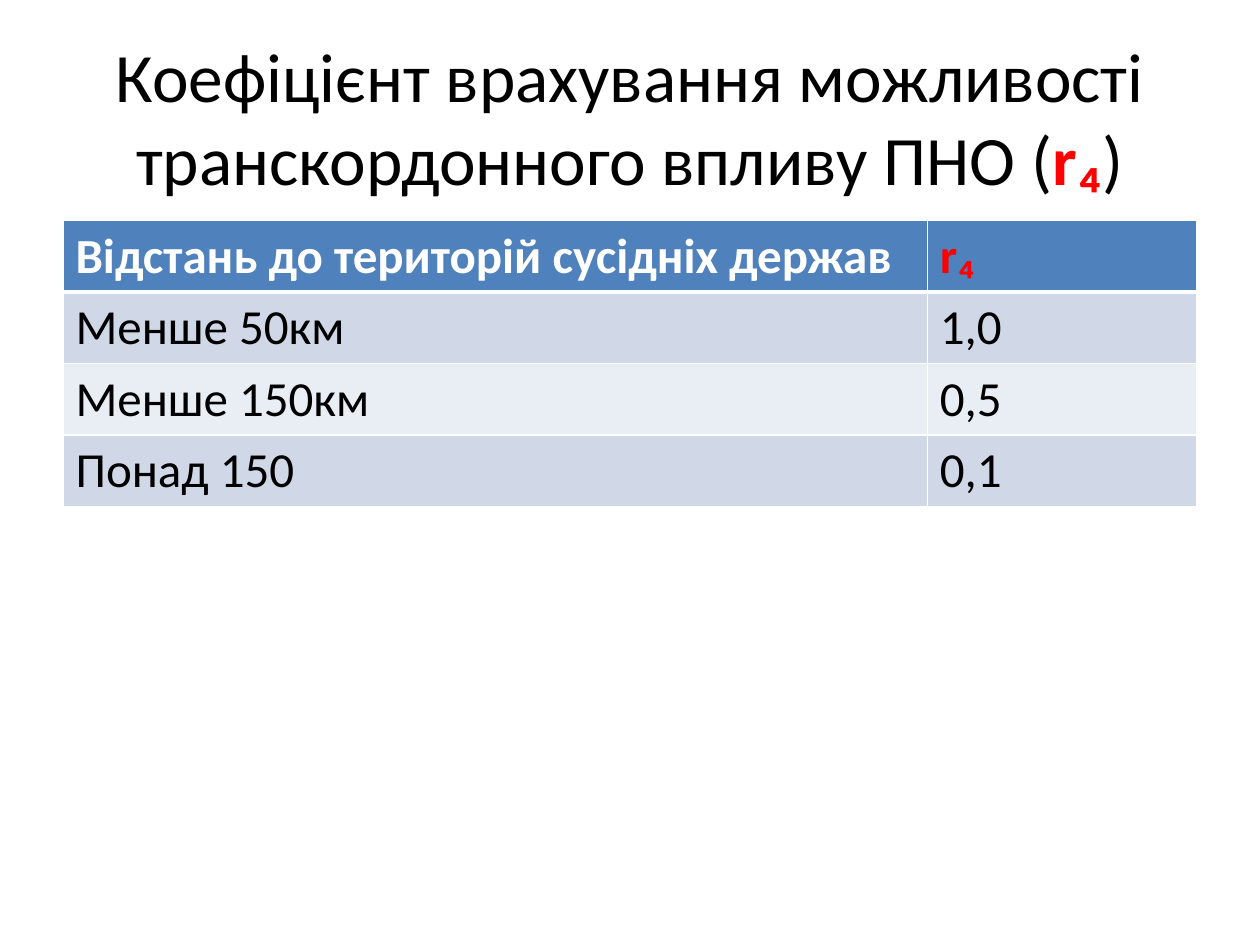
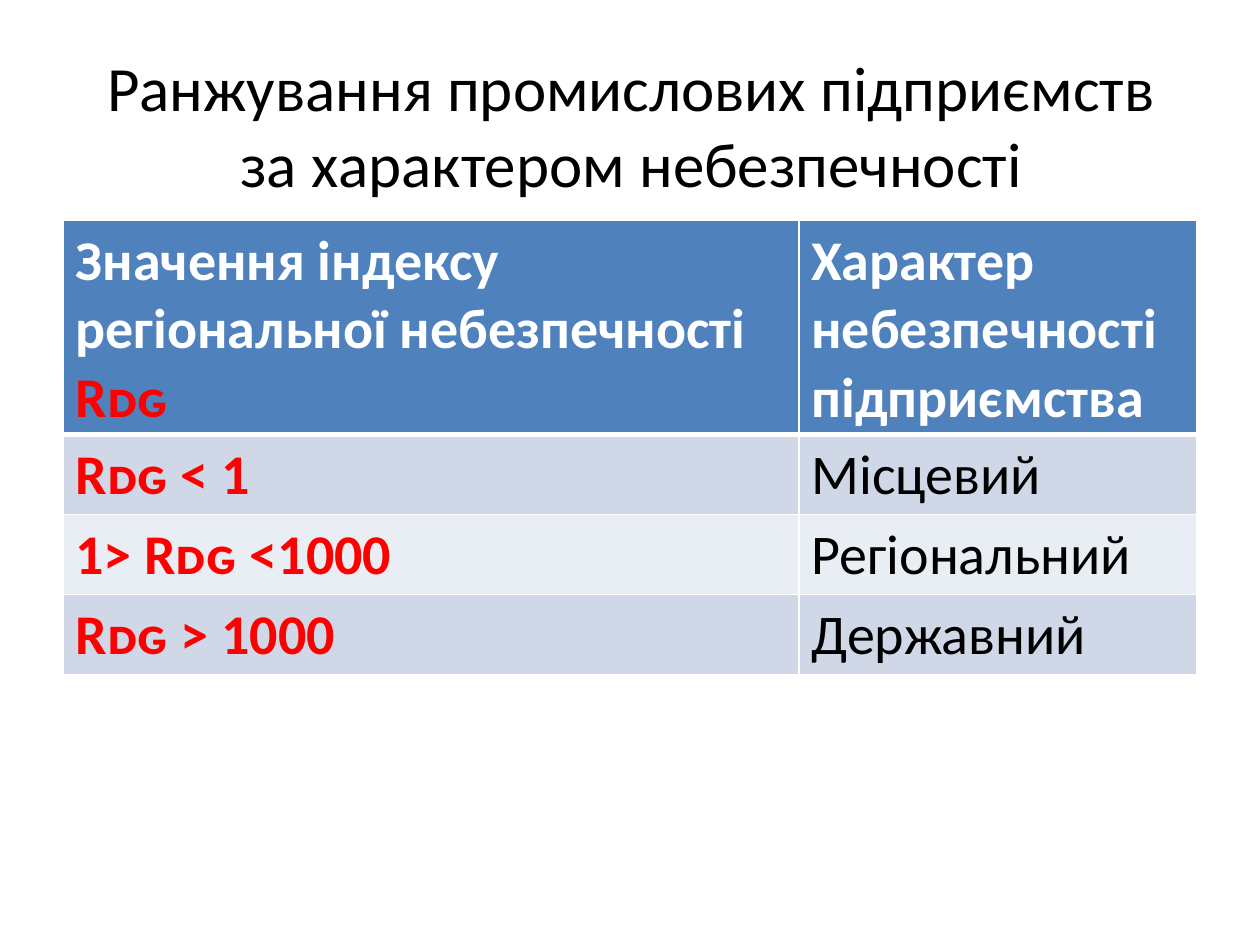
from pptx import Presentation
from pptx.dml.color import RGBColor
from pptx.enum.text import MSO_ANCHOR, PP_ALIGN
from pptx.oxml import parse_xml
from pptx.oxml.ns import nsdecls
from pptx.util import Inches, Pt

# Content: text between asterisks is a red, bold symbol
SLIDES = [
    {
        "title": "Коефіцієнт врахування можливості транскордонного впливу ПНО (*r₄*)",
        "title_at": (0.5, 0.3),
        "title_size": 39.6,
        "table_size": 28,
        "table_height": 2.27,
        "columns": (6.86, 2.14),
        "rows": [
            ("Відстань до територій сусідніх держав", "*r₄*"),
            ("Менше 50км", "1,0"),
            ("Менше 150км", "0,5"),
            ("Понад 150", "0,1"),
        ],
    },
    {
        "title": "Ранжування промислових підприємств за характером небезпечності",
        "title_at": (0.51, 0.36),
        "title_size": 36,
        "table_size": 32,
        "table_height": 3.6,
        "columns": (5.84, 3.16),
        "rows": [
            ("Значення індексу регіональної небезпечності *Rᴅԍ*",
             "Характер небезпечності підприємства"),
            ("*Rᴅԍ < 1*", "Місцевий"),
            ("*1> Rᴅԍ <1000*", "Регіональний"),
            ("*Rᴅԍ > 1000*", "Державний"),
        ],
    },
]

# Shared style
FONT = "Calibri"
BLACK = RGBColor(0x00, 0x00, 0x00)
WHITE = RGBColor(0xFF, 0xFF, 0xFF)
RED = RGBColor(0xFF, 0x00, 0x00)
HEADER_BLUE = RGBColor(0x4F, 0x81, 0xBD)
BANDS = (RGBColor(0xE9, 0xED, 0xF4), RGBColor(0xD0, 0xD8, 0xE8))
LEFT, TABLE_TOP, WIDTH = 0.5, 1.75, 9
TITLE_HEIGHT, ROW_HEIGHT = 1.25, 0.41


def write(frame, text, size, color=BLACK, bold=False, align=PP_ALIGN.LEFT):
    """Fill a text frame, turning the parts between asterisks red and bold."""
    para = frame.paragraphs[0]
    para.alignment = align
    for index, part in enumerate(text.split("*")):
        if not part:
            continue
        marked = index % 2 == 1
        span = para.add_run()
        span.text = part
        span.font.name = FONT
        span.font.size = Pt(size)
        span.font.bold = bold or marked
        span.font.color.rgb = RED if marked else color


def add_borders(cell, top, bottom):
    """Draw white cell edges; top and bottom widths are in points."""
    properties = cell._tc.get_or_add_tcPr()
    edges = (("lnL", 1), ("lnR", 1), ("lnT", top), ("lnB", bottom))
    for position, (edge, width) in enumerate(edges):
        properties.insert(position, parse_xml(
            f'<a:{edge} {nsdecls("a")} w="{Pt(width)}"><a:solidFill>'
            f'<a:srgbClr val="{WHITE}"/></a:solidFill></a:{edge}>'))


def add_title(page, content):
    left, top = content["title_at"]
    box = page.shapes.add_textbox(
        Inches(left), Inches(top), Inches(WIDTH), Inches(TITLE_HEIGHT))
    box.text_frame.word_wrap = True
    box.text_frame.vertical_anchor = MSO_ANCHOR.MIDDLE
    write(box.text_frame, content["title"], content["title_size"],
          align=PP_ALIGN.CENTER)


def add_banded_table(page, content):
    rows, columns = content["rows"], content["columns"]
    holder = page.shapes.add_table(
        len(rows), len(columns), Inches(LEFT), Inches(TABLE_TOP),
        Inches(WIDTH), Inches(ROW_HEIGHT * len(rows)))
    table = holder.table
    for column, width in zip(table.columns, columns):
        column.width = Inches(width)
    for r, texts in enumerate(rows):
        header = r == 0
        for c, text in enumerate(texts):
            cell = table.cell(r, c)
            cell.fill.solid()
            cell.fill.fore_color.rgb = HEADER_BLUE if header else BANDS[r % 2]
            add_borders(cell, top=3 if r == 1 else 1, bottom=3 if header else 1)
            write(cell.text_frame, text, content["table_size"],
                  color=WHITE if header else BLACK, bold=header)
    # Rows grow to fit their text
    holder.height = Inches(content["table_height"])


def main():
    deck = Presentation()
    deck.slide_width, deck.slide_height = Inches(10), Inches(7.5)
    for content in SLIDES:
        page = deck.slides.add_slide(deck.slide_layouts[6])
        add_title(page, content)
        add_banded_table(page, content)
    deck.save("out.pptx")


if __name__ == "__main__":
    main()
